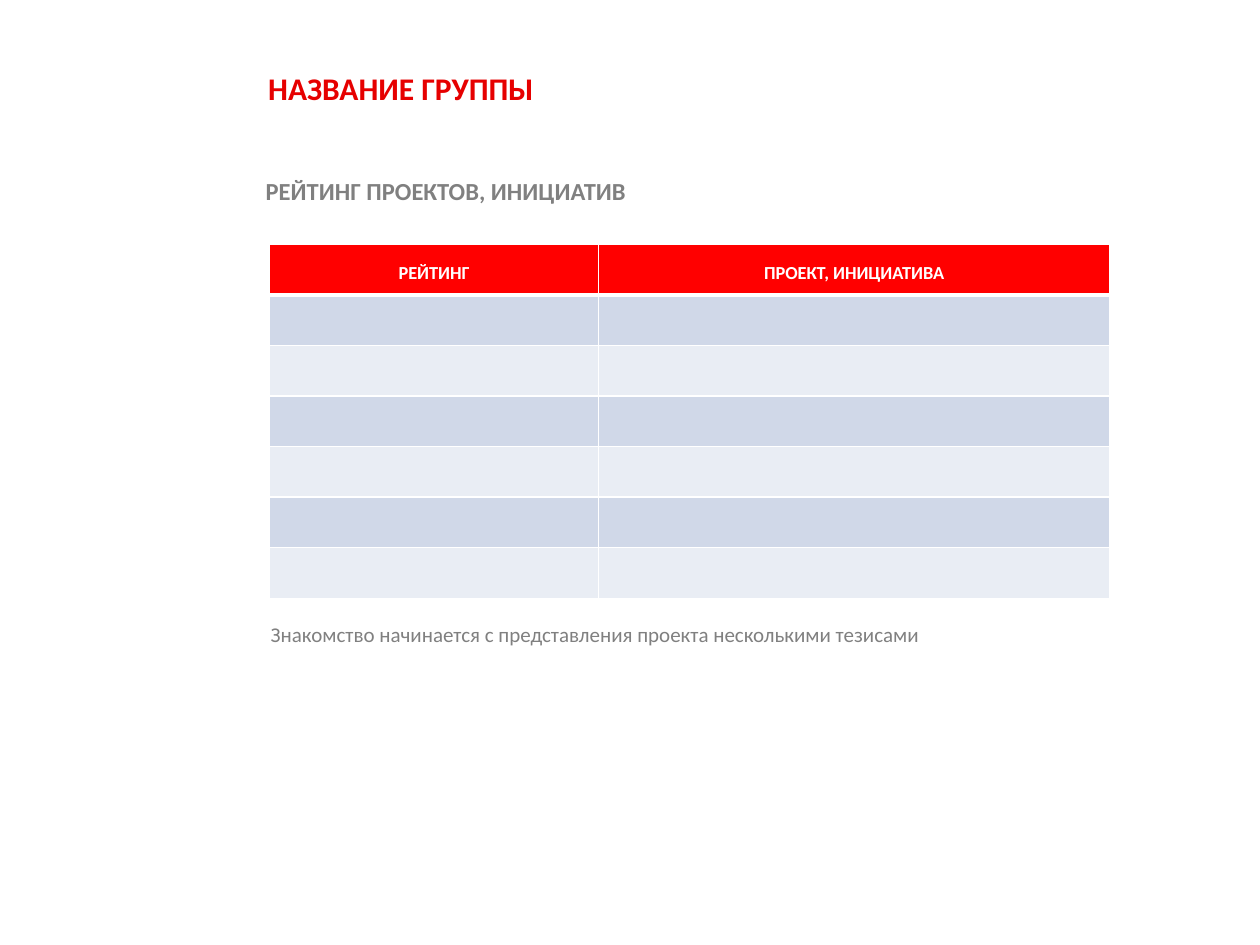
from dataclasses import dataclass
from typing import NamedTuple

from lxml import etree
from pptx import Presentation, util as u
from pptx.dml.color import RGBColor
from pptx.enum import text
from pptx.oxml import ns

SLIDE_WIDTH, SLIDE_HEIGHT = u.Inches(10), u.Inches(7.5)


@dataclass(frozen=True)
class Theme:
    font: str = "Calibri"
    red: str = "E60000"
    grey: str = "808080"
    white: str = "FFFFFF"
    header: str = "FF0000"
    bands: tuple = ("D0D8E8", "E9EDF4")
    title_size: float = 18
    subtitle_size: float = 14
    note_size: float = 12
    header_size: float = 10.5
    rule: float = 1
    header_rule: float = 3


THEME = Theme()


class Area(NamedTuple):
    """Left, top, width and height in percent of the slide."""
    left: float
    top: float
    width: float
    height: float

    def lengths(self) -> tuple:
        return (across(self.left), down(self.top), across(self.width), down(self.height))


class Label(NamedTuple):
    wording: str
    area: Area
    size: float
    color: str
    bold: bool = True
    wrap: bool = True
    anchor: text.MSO_ANCHOR = text.MSO_ANCHOR.TOP
    fit: text.MSO_AUTO_SIZE = text.MSO_AUTO_SIZE.SHAPE_TO_FIT_TEXT


class Column(NamedTuple):
    heading: str
    width: float


LABELS = (
    Label("РЕЙТИНГ ПРОЕКТОВ, ИНИЦИАТИВ", Area(20.1, 18, 30.9, 4.53),
          THEME.subtitle_size, THEME.grey, wrap=False),
    Label("НАЗВАНИЕ ГРУППЫ", Area(20.3, 6.67, 71.5, 5.2),
          THEME.title_size, THEME.red, anchor=text.MSO_ANCHOR.MIDDLE,
          fit=text.MSO_AUTO_SIZE.NONE),
    Label("Знакомство начинается с представления проекта несколькими тезисами",
          Area(20.5, 65.07, 66.9, 4), THEME.note_size, THEME.grey, bold=False),
)
COLUMNS = (Column("РЕЙТИНГ", 26.1), Column("ПРОЕКТ, ИНИЦИАТИВА", 40.6))
TABLE_AREA = Area(21.4, 25.87, 66.7, 37.47)
BODY_ROWS = 6


def across(percent: float) -> int:
    return round(SLIDE_WIDTH * percent / 100)


def down(percent: float) -> int:
    return round(SLIDE_HEIGHT * percent / 100)


def add_run(paragraph, wording: str, size: float, color: str, bold: bool) -> None:
    run = paragraph.add_run()
    run.text = wording
    run.font.name = THEME.font
    run.font.size = u.Pt(size)
    run.font.bold = bold
    run.font.color.rgb = RGBColor.from_string(color)


def add_label(slide, label: Label) -> None:
    frame = slide.shapes.add_textbox(*label.area.lengths()).text_frame
    frame.word_wrap = label.wrap
    frame.auto_size = label.fit
    frame.vertical_anchor = label.anchor
    add_run(frame.paragraphs[0], label.wording, label.size, label.color, label.bold)


def style_cell(cell, color: str, top: float, bottom: float) -> None:
    """Fill a cell and rule its four sides in white."""
    cell.fill.solid()
    cell.fill.fore_color.rgb = RGBColor.from_string(color)
    properties = cell._tc.get_or_add_tcPr()
    sides = {"lnL": THEME.rule, "lnR": THEME.rule, "lnT": top, "lnB": bottom}
    for position, (side, width) in enumerate(sides.items()):
        line = etree.Element(ns.qn(f"a:{side}"), w=str(u.Pt(width)))
        fill = etree.SubElement(line, ns.qn("a:solidFill"))
        etree.SubElement(fill, ns.qn("a:srgbClr"), val=THEME.white)
        properties.insert(position, line)


def add_rating_table(slide) -> None:
    row_count = BODY_ROWS + 1
    table = slide.shapes.add_table(row_count, len(COLUMNS), *TABLE_AREA.lengths()).table
    for row in table.rows:
        row.height = down(TABLE_AREA.height / row_count)

    for index, column in enumerate(COLUMNS):
        table.columns[index].width = across(column.width)
        heading = table.cell(0, index)
        style_cell(heading, THEME.header, THEME.rule, THEME.header_rule)
        paragraph = heading.text_frame.paragraphs[0]
        paragraph.alignment = text.PP_ALIGN.CENTER
        paragraph.line_spacing = 1.5
        add_run(paragraph, column.heading, THEME.header_size, THEME.white, True)

        for row in range(1, row_count):
            cell = table.cell(row, index)
            cell.margin_top = cell.margin_bottom = u.Inches(0.03)
            top = THEME.header_rule if row == 1 else THEME.rule
            style_cell(cell, THEME.bands[(row - 1) % 2], top, THEME.rule)


def main() -> None:
    presentation = Presentation()
    presentation.slide_width, presentation.slide_height = SLIDE_WIDTH, SLIDE_HEIGHT
    slide = presentation.slides.add_slide(presentation.slide_layouts[6])
    subtitle, title, note = LABELS
    add_label(slide, subtitle)
    add_label(slide, title)
    add_rating_table(slide)
    add_label(slide, note)
    presentation.save("out.pptx")


if __name__ == "__main__":
    main()
